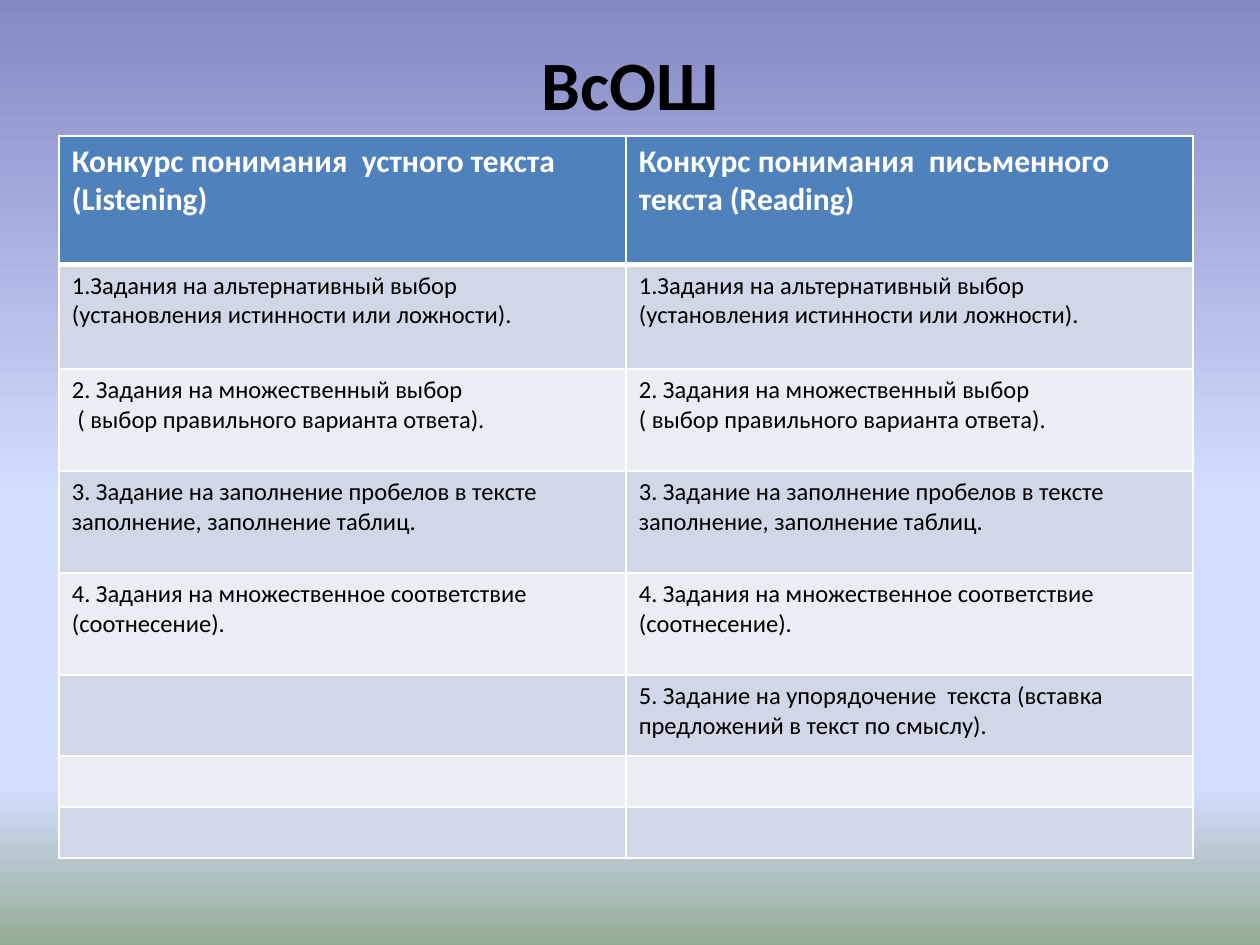
from copy import deepcopy

from pptx import Presentation
from pptx.dml.color import RGBColor
from pptx.enum.text import MSO_ANCHOR, PP_ALIGN
from pptx.oxml.ns import qn
from pptx.oxml.xmlchemy import OxmlElement
from pptx.util import Inches, Pt

BLACK = RGBColor(0x00, 0x00, 0x00)
WHITE = RGBColor(0xFF, 0xFF, 0xFF)
HEADER_BLUE = RGBColor(0x4F, 0x81, 0xBD)
BAND_DARK = RGBColor(0xD0, 0xD8, 0xE8)
BAND_LIGHT = RGBColor(0xE9, 0xED, 0xF4)
SKY = [
    (0, RGBColor(0x84, 0x88, 0xC4)),
    (0.53, RGBColor(0xD4, 0xDE, 0xFF)),
    (0.83, RGBColor(0xD4, 0xDE, 0xFF)),
    (1, RGBColor(0x96, 0xAB, 0x94)),
]
FONT = "Calibri"

TRUE_FALSE = "1.Задания на альтернативный выбор (установления истинности или ложности)."
CHOICE = "2. Задания на множественный выбор"
ANSWER = "( выбор правильного варианта ответа)."
GAPS = "3. Задание на заполнение пробелов в тексте заполнение, заполнение таблиц."
MATCHING = "4. Задания на множественное соответствие (соотнесение)."
ORDERING = "5. Задание на упорядочение  текста (вставка  предложений в текст по смыслу)."

TASKS = [
    (1.02, ["Конкурс понимания  устного текста (Listening)"],
     ["Конкурс понимания  письменного текста (Reading)"]),
    (0.83, [TRUE_FALSE], [TRUE_FALSE]),
    (0.81, [CHOICE, " " + ANSWER], [CHOICE, ANSWER]),
    (0.81, [GAPS], [GAPS]),
    (0.81, [MATCHING], [MATCHING]),
    (0.64, [], [ORDERING]),
    (0.4, [], []),
    (0.4, [], []),
]


def paint_background(slide):
    fill = slide.background.fill
    fill.gradient()
    fill.gradient_angle = 270
    stop_list = slide.background._cSld.find(".//" + qn("a:gsLst"))
    while len(stop_list) < len(SKY):
        stop_list.append(deepcopy(stop_list[0]))
    for stop, (position, color) in zip(fill.gradient_stops, SKY):
        stop.position = position
        stop.color.rgb = color


def add_run(paragraph, text, size, color, bold):
    run = paragraph.add_run()
    run.text = text
    run.font.name = FONT
    run.font.size = Pt(size)
    run.font.bold = bold
    run.font.color.rgb = color


def fill_title(slide, text):
    title = slide.shapes.title
    title.left, title.top = Inches(0.5), Inches(0.3)
    title.width, title.height = Inches(9), Inches(0.72)
    title.text_frame.vertical_anchor = MSO_ANCHOR.MIDDLE
    paragraph = title.text_frame.paragraphs[0]
    paragraph.alignment = PP_ALIGN.CENTER
    add_run(paragraph, text, 39.6, BLACK, True)


def add_border(cell, side, width):
    line = OxmlElement(f"a:ln{side}")
    line.set("w", str(Pt(width)))
    solid = OxmlElement("a:solidFill")
    color = OxmlElement("a:srgbClr")
    color.set("val", str(WHITE))
    solid.append(color)
    line.append(solid)
    cell._tc.get_or_add_tcPr().append(line)


def fill_cell(cell, lines, row_index):
    is_header = row_index == 0
    for side in "LRTB":
        thick = (is_header and side == "B") or (row_index == 1 and side == "T")
        add_border(cell, side, 3 if thick else 1)
    cell.fill.solid()
    band = BAND_DARK if row_index % 2 else BAND_LIGHT
    cell.fill.fore_color.rgb = HEADER_BLUE if is_header else band
    size, color = (18, WHITE) if is_header else (14, BLACK)
    for number, text in enumerate(lines):
        frame = cell.text_frame
        paragraph = frame.add_paragraph() if number else frame.paragraphs[0]
        add_run(paragraph, text, size, color, is_header)


def add_task_table(slide):
    total = sum(height for height, *_ in TASKS)
    table = slide.shapes.add_table(
        len(TASKS), 2, Inches(0.47), Inches(1.08), Inches(9), Inches(total)
    ).table
    for row_index, (height, *columns) in enumerate(TASKS):
        table.rows[row_index].height = Inches(height)
        for column_index, lines in enumerate(columns):
            fill_cell(table.cell(row_index, column_index), lines, row_index)


def main():
    deck = Presentation()
    deck.slide_width, deck.slide_height = Inches(10), Inches(7.5)
    slide = deck.slides.add_slide(deck.slide_layouts[5])
    paint_background(slide)
    fill_title(slide, "ВсОШ")
    add_task_table(slide)
    deck.save("out.pptx")


if __name__ == "__main__":
    main()
